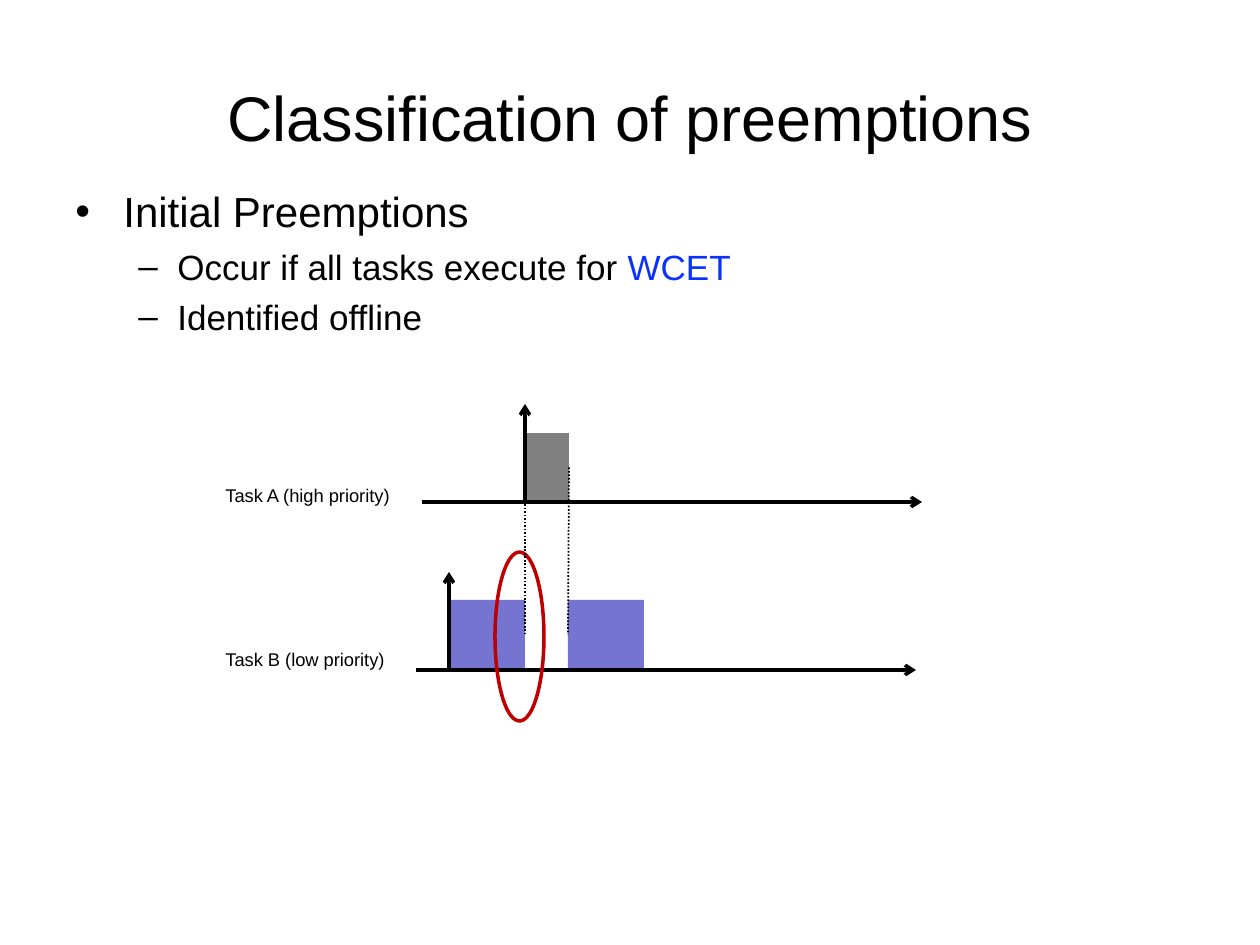
from lxml import etree
from pptx import Presentation
from pptx.dml.color import RGBColor
from pptx.enum.dml import MSO_LINE
from pptx.enum.shapes import MSO_CONNECTOR, MSO_SHAPE
from pptx.enum.text import MSO_ANCHOR, PP_ALIGN
from pptx.oxml.ns import qn
from pptx.util import Pt

PX = 914400 / 126
RECT, OVAL = MSO_SHAPE.RECTANGLE, MSO_SHAPE.OVAL
STRAIGHT, DOT = MSO_CONNECTOR.STRAIGHT, MSO_LINE.ROUND_DOT
MIDDLE, TOP, CENTER = MSO_ANCHOR.MIDDLE, MSO_ANCHOR.TOP, PP_ALIGN.CENTER
LEFT_SIDE, RIGHT_SIDE = 1, 3
BLACK, BLUE, RED, GRAY, VIOLET = "000000", "0A32FA", "C00000", "808080", "7575D1"


def px(*vals):
    return [round(v * PX) for v in vals]


def color(code):
    return RGBColor.from_string(code)


def style(target, **vals):
    for name, val in vals.items():
        setattr(target, name, val)


def add_runs(para, runs, size):
    for text, code in runs:
        run = para.add_run()
        run.text = text
        style(run.font, name="Arial", size=Pt(size))
        run.font.color.rgb = color(code)


def add_frame(slide, box, **vals):
    frame = slide.shapes.add_textbox(*px(*box)).text_frame
    style(frame, word_wrap=True, **vals)
    return frame


def add_text(slide, box, text, size, align=None, anchor=TOP):
    para = add_frame(slide, box, vertical_anchor=anchor).paragraphs[0]
    para.alignment = align
    add_runs(para, [(text, BLACK)], size)


def add_list(slide, box, items):
    """Items are (level, size, bullet, left margin, hang, runs)."""
    frame = add_frame(slide, box, margin_top=px(11)[0])
    for i, (level, size, mark, left, hang, runs) in enumerate(items):
        para = frame.add_paragraph() if i else frame.paragraphs[0]
        props = para._p.get_or_add_pPr()
        props.set("marL", str(px(left)[0]))
        props.set("indent", str(px(-hang)[0]))
        etree.SubElement(props, qn("a:buFont")).set("typeface", "Arial")
        etree.SubElement(props, qn("a:buChar")).set("char", mark)
        style(para, level=level, space_before=Pt(5 if i else 0))
        add_runs(para, runs, size)


def add_block(slide, box, code):
    block = slide.shapes.add_shape(RECT, *px(*box))
    block.shadow.inherit = False
    block.fill.solid()
    block.fill.fore_color.rgb = color(code)
    block.line.fill.background()
    return block


def add_ring(slide, box, code):
    ring = slide.shapes.add_shape(OVAL, *px(*box))
    ring.shadow.inherit = False
    ring.fill.background()
    ring.line.color.rgb = color(code)
    ring.line.width = Pt(2)


def add_line(slide, ends, width):
    line = slide.shapes.add_connector(STRAIGHT, *px(*ends))
    line.line.color.rgb = color(BLACK)
    line.line.width = Pt(width)
    etree.SubElement(line._element.spPr, qn("a:effectLst"))
    return line


def add_arrow(slide, ends):
    line = add_line(slide, ends, 2)
    etree.SubElement(line.line._get_or_add_ln(), qn("a:tailEnd")).set("type", "arrow")


def add_link(slide, first, last):
    """Dotted line from the right side of one block to the left of the next."""
    line = add_line(slide, (0, 0, 0, 0), 1)
    line.line.dash_style = DOT
    line.begin_connect(first, RIGHT_SIDE)
    line.end_connect(last, LEFT_SIDE)


def main():
    deck = Presentation()
    deck.slide_width, deck.slide_height = px(1260, 945)
    slide = deck.slides.add_slide(deck.slide_layouts[6])

    add_text(slide, (63, 38, 1134, 157), "Classification of preemptions", 36, CENTER, MIDDLE)
    add_list(slide, (63, 175, 1134, 189), [
        (0, 24, "•", 48, 48, [("Initial Preemptions", BLACK)]),
        (1, 20, "–", 102, 39, [("Occur if all tasks execute for ", BLACK), ("WCET", BLUE)]),
        (1, 20, "–", 102, 39, [("Identified offline", BLACK)]),
    ])

    start, preempt, resume = 449, 525, 569
    span, tall = preempt - start, 69
    base_a, base_b = 502, 670
    top_b = base_b - tall - 1
    low = add_block(slide, (start, top_b, span, tall), VIOLET)
    high = add_block(slide, (preempt, base_a - tall, resume - preempt, tall), GRAY)
    rest = add_block(slide, (resume - 1, top_b, span, tall), VIOLET)

    for name, label_y, axis_x, release, base in (
        ("Task A (high priority)", 478, 422, preempt, base_a),
        ("Task B (low priority)", 642, 416, start, base_b),
    ):
        add_arrow(slide, (release, base, release, base - 98))
        add_arrow(slide, (axis_x, base, axis_x + 500, base))
        add_text(slide, (213, label_y, 198, 35), name, 10.5)

    add_link(slide, high, rest)
    add_ring(slide, (495, 552, 49, 169), RED)
    add_link(slide, low, high)
    deck.save("out.pptx")


if __name__ == "__main__":
    main()
